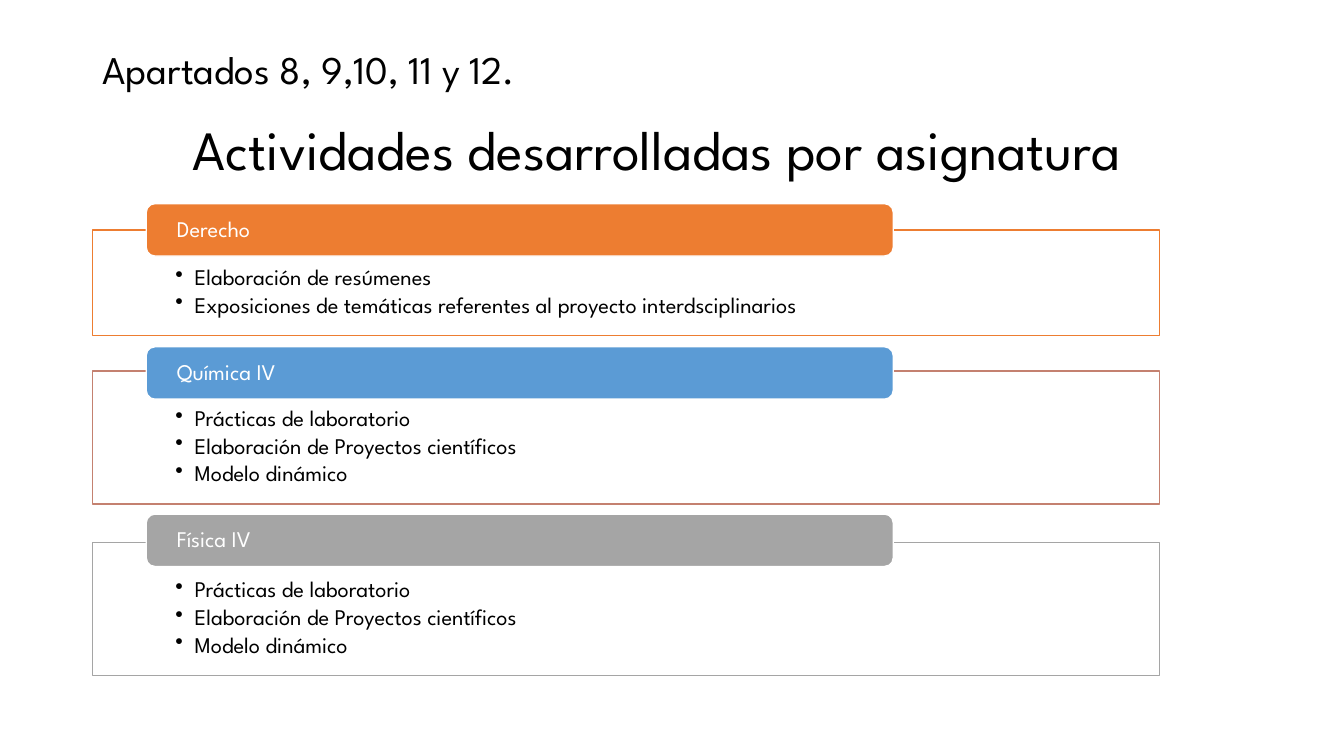
from lxml import etree
from pptx import Presentation
from pptx.dml.color import RGBColor
from pptx.enum import shapes, text
from pptx.oxml import ns
from pptx.util import Inches, Pt

FONT = "League Spartan"
BLACK = RGBColor(0x00, 0x00, 0x00)
WHITE = RGBColor(0xFF, 0xFF, 0xFF)
ORANGE = RGBColor(0xED, 0x7D, 0x31)
BLUE = RGBColor(0x5B, 0x9B, 0xD5)
GRAY = RGBColor(0xA5, 0xA5, 0xA5)
BRICK = RGBColor(0xC4, 0x81, 0x70)

LABORATORY = ["Prácticas de laboratorio", "Elaboración de Proyectos científicos", "Modelo dinámico"]
# Subject, header top, header fill, frame top, frame height, frame line, activities
SUBJECTS = [
    ("Derecho", 2.02, ORANGE, 2.28, 1.05, ORANGE,
     ["Elaboración de resúmenes",
      "Exposiciones de temáticas referentes al proyecto interdsciplinarios"]),
    ("Química IV", 3.44, BLUE, 3.68, 1.32, BRICK, LABORATORY),
    ("Física IV", 5.10, GRAY, 5.38, 1.32, GRAY, LABORATORY),
]


def write(box, lines, size, color, anchor, insets, align=text.PP_ALIGN.LEFT,
          spacing=0.9, after=0, bullets=False):
    frame = box.text_frame
    frame.word_wrap = True
    frame.vertical_anchor = anchor
    frame.margin_left, frame.margin_top, frame.margin_right, frame.margin_bottom = map(Inches, insets)
    for number, line in enumerate(lines):
        para = frame.paragraphs[0] if number == 0 else frame.add_paragraph()
        para.text = line
        para.alignment = align
        para.line_spacing = spacing
        para.space_after = Pt(after)
        if bullets:
            properties = para._p.get_or_add_pPr()
            properties.set("marL", str(Inches(0.19)))
            properties.set("indent", str(Inches(-0.19)))
            etree.SubElement(properties, ns.qn("a:buChar")).set("char", "•")
        para.font.name = FONT
        para.font.size = Pt(size)
        para.font.color.rgb = color


def add_block(kind, left, top, width, height, fill, line):
    block = page.shapes.add_shape(kind, Inches(left), Inches(top), Inches(width), Inches(height))
    block.shadow.inherit = False
    block.fill.solid()
    block.fill.fore_color.rgb = fill
    block.line.color.rgb = line
    block.line.width = Pt(1)
    return block


deck = Presentation()
deck.slide_width, deck.slide_height = Inches(13.33), Inches(7.5)
page = deck.slides.add_slide(deck.slide_layouts[6])

# Title, set slightly left of centre by its right inset
title = page.shapes.add_textbox(Inches(0.92), Inches(1.17), Inches(11.5), Inches(0.68))
write(title, ["Actividades desarrolladas por asignatura"], 39.6, BLACK,
      text.MSO_ANCHOR.MIDDLE, (0.1, 0.05, 0.4, 0.05), text.PP_ALIGN.CENTER)

# Framed activity list with an overlapping header for each subject
for subject, header_top, header_fill, frame_top, frame_height, frame_line, activities in SUBJECTS:
    activity_frame = add_block(shapes.MSO_SHAPE.RECTANGLE, 0.92, frame_top, 10.58, frame_height,
                               WHITE, frame_line)
    write(activity_frame, activities, 16, BLACK, text.MSO_ANCHOR.TOP,
          (0.82, 0.36, 0.82, 0.12), after=2.5, bullets=True)
    header = add_block(shapes.MSO_SHAPE.ROUNDED_RECTANGLE, 1.45, header_top, 7.41, 0.52,
                       header_fill, WHITE)
    write(header, [subject], 16, WHITE, text.MSO_ANCHOR.MIDDLE, (0.28, 0, 0.28, 0))

# Section label
label = page.shapes.add_textbox(Inches(0.92), Inches(0.4), Inches(11.5), Inches(0.57))
write(label, ["Apartados 8, 9,10, 11 y 12."], 28, BLACK, text.MSO_ANCHOR.MIDDLE,
      (0.1, 0.05, 0.1, 0.05), spacing=1.0)

deck.save("out.pptx")
